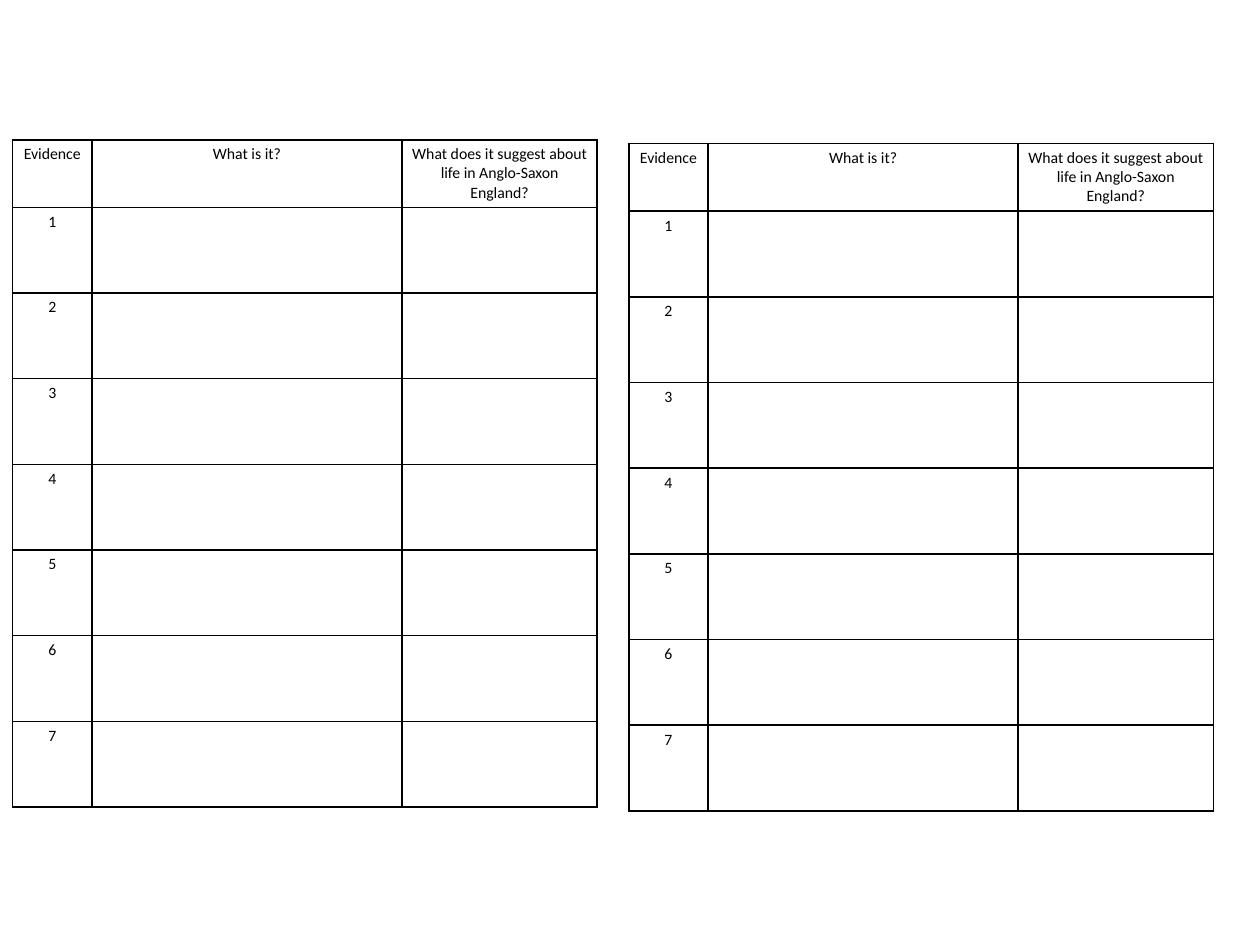
import pptx
import pptx.dml.color
import pptx.enum.text
import pptx.oxml
import pptx.oxml.ns
import pptx.util
from pptx.util import Inches

HEADINGS = ["Evidence", "What is it?",
            "What does it suggest about life in Anglo-Saxon England?"]
EVIDENCE_COUNT = 7
WORKSHEET_ORIGINS = [(0.1, 1.11), (4.99, 1.14)]
COLUMN_WIDTHS = [0.63, 2.46, 1.55]
HEADING_HEIGHT, EVIDENCE_HEIGHT = 0.53, 0.68
MARGIN_X, MARGIN_Y = 0.07, 0.04
INK = "000000"


def color(hex_code):
    return pptx.dml.color.RGBColor.from_string(hex_code)


def write(cell, text, size=9, font="Calibri", ink=INK,
          align=pptx.enum.text.PP_ALIGN.CENTER):
    paragraph = cell.text_frame.paragraphs[0]
    paragraph.alignment = align
    run = paragraph.add_run()
    run.text = text
    run.font.size = pptx.util.Pt(size)
    run.font.name = font
    run.font.bold = False
    run.font.color.rgb = color(ink)


def add_borders(cell, ink=INK, width=1):
    """Rule all four sides; border elements must precede the cell's fill."""
    properties = cell._tc.get_or_add_tcPr()
    for position, side in enumerate(("lnL", "lnR", "lnT", "lnB")):
        properties.insert(position, pptx.oxml.parse_xml(
            f'<a:{side} {pptx.oxml.ns.nsdecls("a")} w="{pptx.util.Pt(width)}">'
            f'<a:solidFill><a:srgbClr val="{ink}"/></a:solidFill>'
            f'<a:prstDash val="solid"/></a:{side}>'))


def add_worksheet(slide, left, top):
    rows = [HEADINGS] + [[str(number), "", ""]
                         for number in range(1, EVIDENCE_COUNT + 1)]
    heights = [HEADING_HEIGHT] + [EVIDENCE_HEIGHT] * EVIDENCE_COUNT
    worksheet = slide.shapes.add_table(
        len(rows), len(HEADINGS), Inches(left), Inches(top),
        Inches(sum(COLUMN_WIDTHS)), Inches(sum(heights))).table
    worksheet.first_row = worksheet.horz_banding = False
    for column, width in zip(worksheet.columns, COLUMN_WIDTHS):
        column.width = Inches(width)
    for row, height, texts in zip(worksheet.rows, heights, rows):
        row.height = Inches(height)
        for cell, text in zip(row.cells, texts):
            cell.margin_left = cell.margin_right = Inches(MARGIN_X)
            cell.margin_top = cell.margin_bottom = Inches(MARGIN_Y)
            cell.fill.background()
            add_borders(cell)
            if text:
                write(cell, text)


def main():
    deck = pptx.Presentation()
    deck.slide_width, deck.slide_height = Inches(10), Inches(7.5)
    slide = deck.slides.add_slide(deck.slide_layouts[6])
    for left, top in WORKSHEET_ORIGINS:
        add_worksheet(slide, left, top)
    deck.save("out.pptx")


if __name__ == "__main__":
    main()
